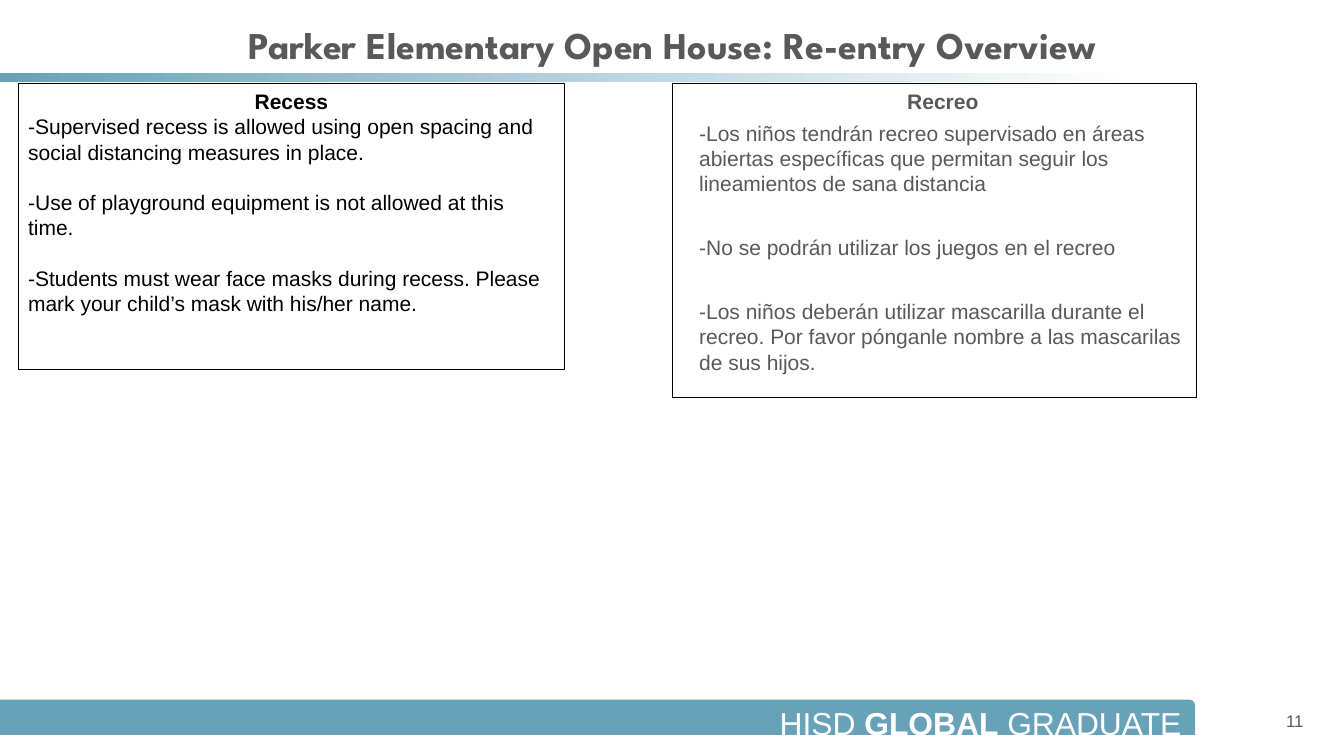
from pptx import Presentation
from pptx.dml.color import RGBColor
from pptx.enum.shapes import MSO_SHAPE
from pptx.enum.text import MSO_ANCHOR, PP_ALIGN
from pptx.util import Cm, Pt

LEFT, CENTER, RIGHT = PP_ALIGN.LEFT, PP_ALIGN.CENTER, PP_ALIGN.RIGHT
TOP, MIDDLE = MSO_ANCHOR.TOP, MSO_ANCHOR.MIDDLE
RECT, ROUND_ONE = MSO_SHAPE.RECTANGLE, MSO_SHAPE.ROUND_1_RECTANGLE

THEME = {
    "teal": RGBColor(0x67, 0xA2, 0xB9),
    "white": RGBColor(0xFF, 0xFF, 0xFF),
    "black": RGBColor(0, 0, 0),
    "slate": RGBColor(0x58, 0x59, 0x5B),
    "gray": RGBColor(0x59, 0x59, 0x59),
    "title_font": "League Spartan",
    "body_font": "Arial",
    "title_size": Pt(27),
    "footer_size": Pt(22.7),
    "body_size": Pt(15),
    "number_size": Pt(12),
}

prs = Presentation()
prs.slide_width, prs.slide_height = Cm(33.87), Cm(19.05)
s = prs.slides.add_slide(prs.slide_layouts[6])


def add_box(shape, left, top, width, height, anchor=TOP):
    box = (Cm(left), Cm(top), Cm(width), Cm(height))
    if shape is None:
        sp = s.shapes.add_textbox(*box)
    else:
        sp = s.shapes.add_shape(shape, *box)
        sp.shadow.inherit = False
        sp.line.fill.background()
    sp.text_frame.word_wrap = True
    sp.text_frame.vertical_anchor = anchor
    return sp


def add_run(p, text, size, color, bold=False, font=THEME["body_font"]):
    r = p.add_run()
    r.text = text
    r.font.name = font
    r.font.size = THEME[size]
    r.font.color.rgb = THEME[color]
    r.font.bold = bold


sp = add_box(RECT, 0, 1.85, 28.52, 0.23)
sp.fill.gradient()
sp.fill.gradient_angle = 0
for stop, color, position in zip(sp.fill.gradient_stops, ("teal", "white"), (0, 1)):
    stop.color.rgb = THEME[color]
    stop.position = position

sp = add_box(ROUND_ONE, 0, 17.63, 30.12, 0.89)
sp.fill.solid()
sp.fill.fore_color.rgb = THEME["teal"]

tf = add_box(None, 12.73, 17.55, 17.37, 0.99).text_frame
tf.margin_left = tf.margin_right = Cm(0.33)
tf.margin_top = tf.margin_bottom = Cm(0.18)
p = tf.paragraphs[0]
p.alignment = RIGHT
for text, bold in (("HISD ", False), ("GLOBAL", True), (" GRADUATE", False)):
    add_run(p, text, "footer_size", "white", bold)

p = add_box(None, 1.7, 0.41, 30.48, 1.45).text_frame.paragraphs[0]
p.alignment = CENTER
add_run(p, "Parker Elementary Open House: Re-entry Overview",
        "title_size", "slate", True, THEME["title_font"])

p = add_box(None, 30.89, 17.65, 2.21, 1.02, MIDDLE).text_frame.paragraphs[0]
p.alignment = RIGHT
add_run(p, "11", "number_size", "slate")

panels = [
    ((0.46, 2.11, 13.77, 7.21), "black", 0, 0, 18, "Recess", [
        "-Supervised recess is allowed using open spacing and social distancing measures in place.",
        "-Use of playground equipment is not allowed at this time.",
        "-Students must wear face masks during recess. Please mark your child’s mask with his/her name.",
    ]),
    ((16.94, 2.11, 13.21, 7.92), "gray", 0.43, 4.8, 27.6, "Recreo", [
        "-Los niños tendrán recreo supervisado en áreas abiertas específicas que permitan seguir los lineamientos de sana distancia",
        "-No se podrán utilizar los juegos en el recreo",
        "-Los niños deberán utilizar mascarilla durante el recreo. Por favor pónganle nombre a las mascarilas de sus hijos.",
    ]),
]

for box, color, indent, heading_gap, rule_gap, heading, rules in panels:
    sp = add_box(RECT, *box)
    sp.fill.background()
    sp.line.color.rgb = THEME["black"]
    sp.line.width = Pt(0.75)
    tf = sp.text_frame
    for i, text in enumerate([heading] + rules):
        p = tf.paragraphs[0] if i == 0 else tf.add_paragraph()
        p.alignment = LEFT if i else CENTER
        p._p.get_or_add_pPr().set("marL", str(Cm(indent)))
        if i:
            p.space_before = Pt(heading_gap if i == 1 else rule_gap)
        add_run(p, text, "body_size", color, i == 0)

prs.save("out.pptx")
